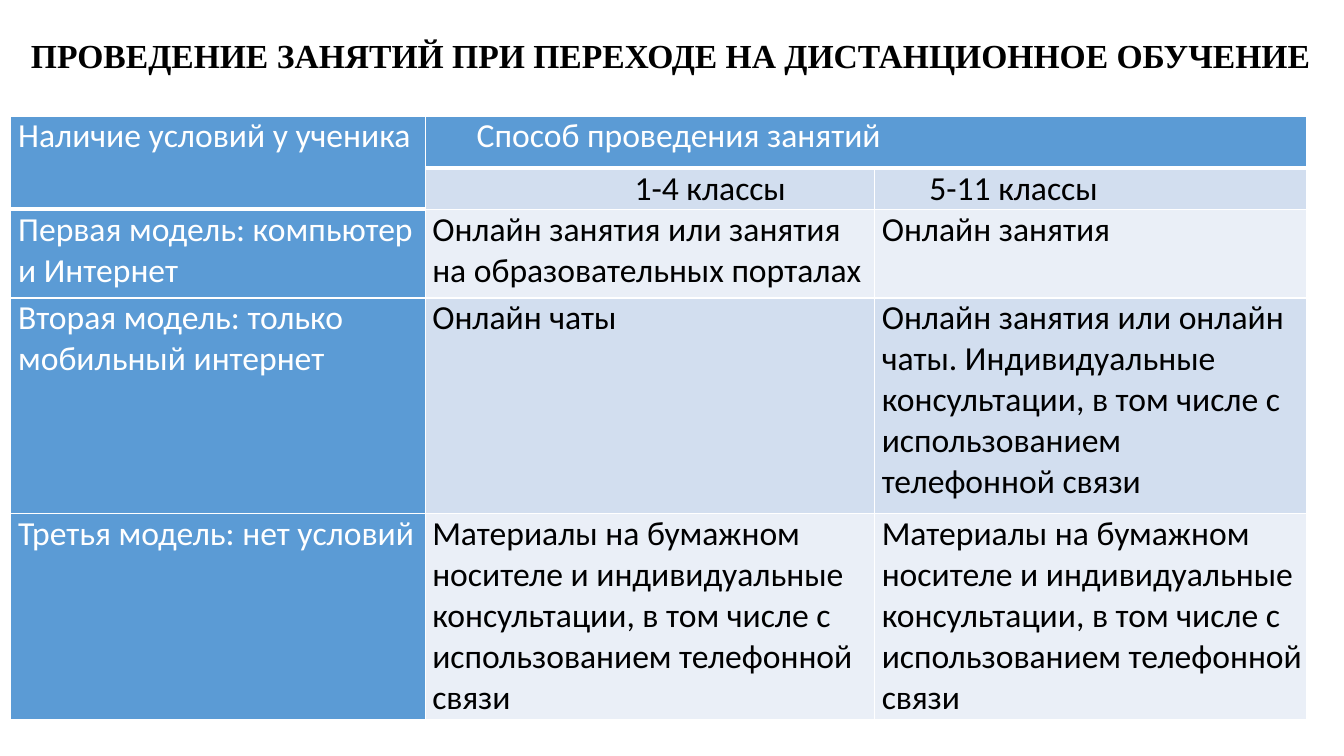
from dataclasses import dataclass

import pptx
import pptx.dml.color
import pptx.enum.text
import pptx.oxml
import pptx.oxml.ns
import pptx.table
import pptx.util
from pptx.util import Pt

ALIGN = pptx.enum.text.PP_ALIGN


@dataclass(frozen=True)
class Theme:
    title_font: str = "Times New Roman"
    body_font: str = "Calibri"
    size: float = 24
    dark: str = "000000"
    light: str = "FFFFFF"
    header: str = "5B9BD5"
    band_dark: str = "D2DEEF"
    band_light: str = "EAEFF7"
    thin_edge: float = 1
    heavy_edge: float = 3


@dataclass(frozen=True)
class Entry:
    row: int
    column: int
    paragraphs: tuple[str, ...]
    left: float = 5
    right: float = 0
    rows: int = 1
    columns: int = 1
    align: ALIGN = ALIGN.LEFT

    @property
    def is_header(self) -> bool:
        return self.row == 0 or self.column == 0


THEME = Theme()
COLUMN_WIDTHS = (296.6, 321.1, 308.2)
ROW_HEIGHTS = (37.4, 29.3, 63.4, 154.1, 146.9)
# Cells directly below the header area
BELOW_HEADER = {(1, 1), (1, 2), (2, 0)}

PAPER_MATERIALS = (
    "Материалы на бумажном носителе и индивидуальные консультации, "
    "в том числе с использованием телефонной связи",
)
ENTRIES = (
    Entry(0, 0, ("Наличие условий у ученика",), left=5.8, rows=2),
    Entry(0, 1, ("Способ проведения занятий",), left=36.7, columns=2),
    Entry(1, 1, ("1-4 классы",), left=0, right=63.5, align=ALIGN.RIGHT),
    Entry(1, 2, ("5-11 классы",), left=39),
    Entry(2, 0, ("Первая модель: компьютер и Интернет",), left=5.8),
    Entry(2, 1, ("Онлайн занятия или занятия на образовательных порталах",)),
    Entry(2, 2, ("Онлайн занятия",)),
    Entry(3, 0, ("Вторая модель: только мобильный интернет",), left=5.8),
    Entry(3, 1, ("Онлайн чаты",)),
    Entry(3, 2, (
        "Онлайн занятия или онлайн чаты. Индивидуальные консультации, "
        "в том числе с использованием",
        "телефонной связи",
    )),
    Entry(4, 0, ("Третья модель: нет условий",), left=5.8),
    Entry(4, 1, PAPER_MATERIALS),
    Entry(4, 2, PAPER_MATERIALS),
)


def add_run(paragraph, text: str, font: str, color: str, bold: bool = False) -> None:
    run = paragraph.add_run()
    run.text = text
    run.font.name = font
    run.font.size = Pt(THEME.size)
    run.font.bold = bold
    run.font.color.rgb = pptx.dml.color.RGBColor.from_string(color)


def set_borders(cell: pptx.table._Cell, row: int, column: int) -> None:
    heavy = {"T": (row, column) in BELOW_HEADER, "B": (row + 1, column) in BELOW_HEADER}
    properties = cell._tc.get_or_add_tcPr()
    for side in "LRTB":
        width = THEME.heavy_edge if heavy.get(side) else THEME.thin_edge
        properties.append(pptx.oxml.parse_xml(
            f'<a:ln{side} {pptx.oxml.ns.nsdecls("a")} w="{Pt(width)}"><a:solidFill>'
            f'<a:srgbClr val="{THEME.light}"/></a:solidFill></a:ln{side}>'
        ))


def fill_entry(table: pptx.table.Table, entry: Entry) -> None:
    cell = table.cell(entry.row, entry.column)
    if entry.rows > 1 or entry.columns > 1:
        cell.merge(table.cell(entry.row + entry.rows - 1, entry.column + entry.columns - 1))
    cell.margin_left, cell.margin_right = Pt(entry.left), Pt(entry.right)
    cell.margin_top = cell.margin_bottom = Pt(0)

    band = THEME.band_dark if entry.row % 2 else THEME.band_light
    cell.fill.solid()
    cell.fill.fore_color.rgb = pptx.dml.color.RGBColor.from_string(
        THEME.header if entry.is_header else band)

    frame = cell.text_frame
    for index, text in enumerate(entry.paragraphs):
        paragraph = frame.add_paragraph() if index else frame.paragraphs[0]
        paragraph.alignment = entry.align
        add_run(paragraph, text, THEME.body_font,
                THEME.light if entry.is_header else THEME.dark)


def add_heading(slide) -> None:
    heading = slide.shapes.title
    heading.left, heading.top = Pt(7.2), Pt(19.4)
    heading.width, heading.height = Pt(943.9), Pt(38.2)
    frame = heading.text_frame
    frame.word_wrap = True
    frame.auto_size = pptx.enum.text.MSO_AUTO_SIZE.NONE
    frame.vertical_anchor = pptx.enum.text.MSO_ANCHOR.BOTTOM
    paragraph = frame.paragraphs[0]
    paragraph.alignment = ALIGN.CENTER
    paragraph.line_spacing = 0.9
    add_run(paragraph, "ПРОВЕДЕНИЕ ЗАНЯТИЙ ПРИ ПЕРЕХОДЕ НА ДИСТАНЦИОННОЕ ОБУЧЕНИЕ",
            THEME.title_font, THEME.dark, bold=True)


def add_models_table(slide) -> None:
    table = slide.shapes.add_table(
        len(ROW_HEIGHTS), len(COLUMN_WIDTHS), Pt(7.2), Pt(82.8),
        Pt(sum(COLUMN_WIDTHS)), Pt(sum(ROW_HEIGHTS))).table
    table.first_row = table.horz_banding = False
    for column, width in zip(table.columns, COLUMN_WIDTHS):
        column.width = Pt(width)
    for row, height in zip(table.rows, ROW_HEIGHTS):
        row.height = Pt(height)
    for row in range(len(ROW_HEIGHTS)):
        for column in range(len(COLUMN_WIDTHS)):
            set_borders(table.cell(row, column), row, column)
    for entry in ENTRIES:
        fill_entry(table, entry)


def main() -> None:
    presentation = pptx.Presentation()
    presentation.slide_width, presentation.slide_height = Pt(960), Pt(540)
    # Title-only layout
    slide = presentation.slides.add_slide(presentation.slide_layouts[5])
    add_heading(slide)
    add_models_table(slide)
    presentation.save("out.pptx")


if __name__ == "__main__":
    main()
